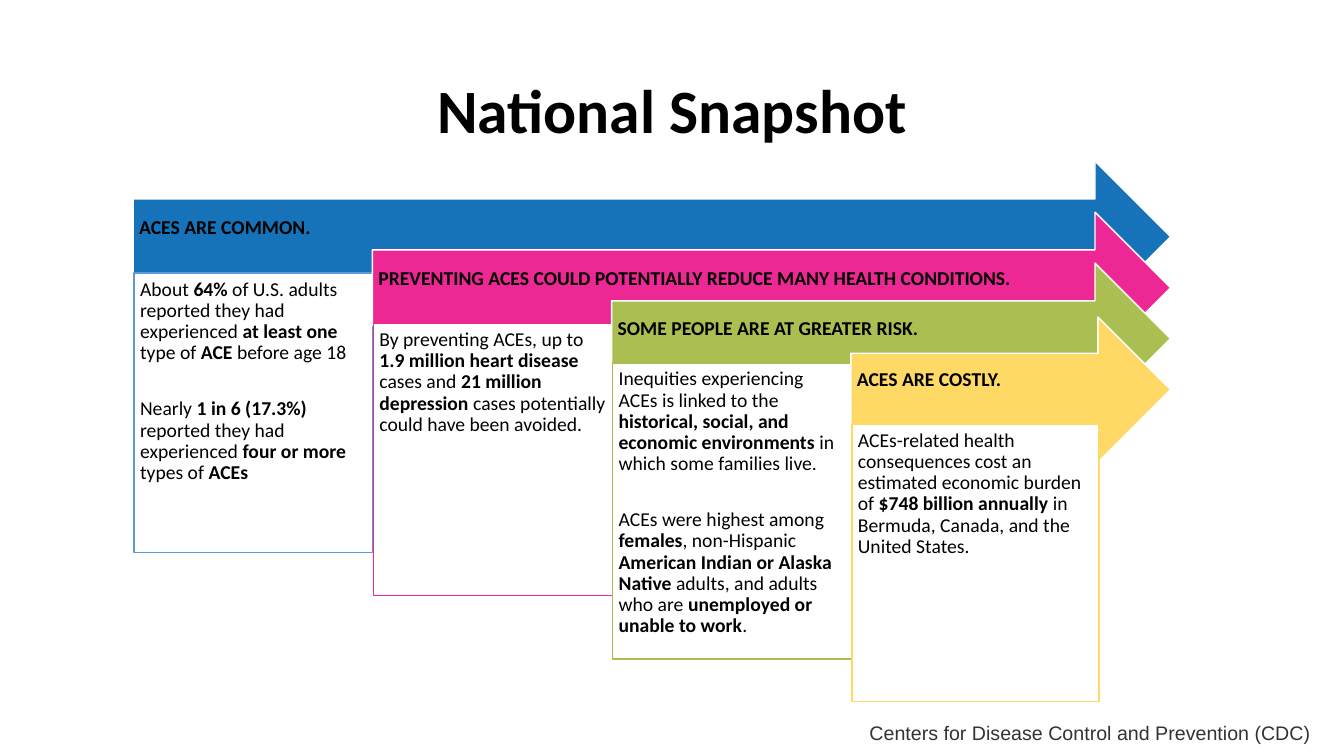
from dataclasses import dataclass

from pptx import Presentation
from pptx.dml.color import RGBColor
from pptx.enum.shapes import MSO_SHAPE
from pptx.enum.text import MSO_ANCHOR, MSO_AUTO_SIZE, PP_ALIGN
from pptx.util import Inches, Pt

ARROW, RECT = MSO_SHAPE.RIGHT_ARROW, MSO_SHAPE.RECTANGLE
TOP, MIDDLE = MSO_ANCHOR.TOP, MSO_ANCHOR.MIDDLE
LEFT, CENTER, RIGHT = PP_ALIGN.LEFT, PP_ALIGN.CENTER, PP_ALIGN.RIGHT
FIT_SHAPE, NO_FIT = MSO_AUTO_SIZE.SHAPE_TO_FIT_TEXT, MSO_AUTO_SIZE.NONE

COLORS = {
    "black": "000000", "white": "FFFFFF", "gray": "333333", "sky": "5B9BD5",
    "blue": "1673BA", "pink": "ED2793", "green": "AABE52", "yellow": "FFD966",
}

# Staircase of arrows: equal steps, shared right edge
FIRST_LEFT, STEP_X, RIGHT_EDGE = 1.32, 2.373, 11.61
FIRST_MIDDLE, STEP_Y = 2.35, 0.505
PARAGRAPH_GAP = 25


@dataclass
class Topic:
    heading: str
    paragraphs: list[str]  # asterisks enclose bold words
    fill: str
    border: str
    arrow_height: float
    card_top: float
    card_width: float
    card_height: float


TOPICS = [
    Topic("ACES ARE COMMON.",
          ["About *64% *of U.S. adults reported they had experienced "
           "*at least one *type of *ACE* before age 18",
           "Nearly *1 in 6 (17.3%) *reported they had experienced "
           "*four or more *types of *ACEs*"],
          "blue", "sky", 1.5, 2.71, 2.37, 2.77),
    Topic("PREVENTING ACES COULD POTENTIALLY REDUCE MANY HEALTH CONDITIONS.",
          ["By preventing ACEs, up to *1.9 million heart disease *cases and "
           "*21 million depression *cases potentially could have been avoided."],
          "pink", "pink", 1.5, 3.21, 2.37, 2.7),
    Topic("SOME PEOPLE ARE AT GREATER RISK.",
          ["Inequities experiencing ACEs is linked to the *historical, social, "
           "and economic environments *in which some families live.",
           "ACEs were highest among *females*, non-Hispanic *American Indian or "
           "Alaska Native *adults, and adults who are *unemployed or unable to "
           "work*."],
          "green", "green", 1.5, 3.6, 2.37, 2.94),
    Topic("ACES ARE COSTLY.",
          ["ACEs-related health consequences cost an estimated economic burden "
           "of *$748 billion annually *in Bermuda, Canada, and the United States."],
          "yellow", "yellow", 1.44, 4.21, 2.45, 2.75),
]


def rgb(name: str) -> RGBColor:
    return RGBColor.from_string(COLORS[name])


def write(tf, paragraphs: list[str], size: int = 14, font: str = "Calibri",
          color: str = "black", align=LEFT, spacing: float = 0.9) -> None:
    for i, text in enumerate(paragraphs):
        p = tf.paragraphs[0] if i == 0 else tf.add_paragraph()
        p.alignment = align
        p.line_spacing = spacing
        if i:
            p.space_before = Pt(PARAGRAPH_GAP)
        for j, part in enumerate(text.split("*")):
            if part:
                r = p.add_run()
                r.text = part
                r.font.name = font
                r.font.size = Pt(size)
                r.font.bold = j % 2 == 1
                r.font.color.rgb = rgb(color)


def add_box(s, kind, box: tuple, fill: str, border: str, paragraphs: list[str],
            anchor, right: float = 0.06, bottom: float = 0.06) -> None:
    sp = s.shapes.add_shape(kind, *map(Inches, box))
    sp.shadow.inherit = False
    sp.fill.solid()
    sp.fill.fore_color.rgb = rgb(fill)
    sp.line.color.rgb = rgb(border)
    sp.line.width = Pt(1)
    tf = sp.text_frame
    tf.word_wrap = True
    tf.vertical_anchor = anchor
    tf.margin_left = tf.margin_top = Inches(0.06)
    tf.margin_right, tf.margin_bottom = Inches(right), Inches(bottom)
    write(tf, paragraphs)


def add_topic(s, index: int, t: Topic) -> None:
    left = FIRST_LEFT + index * STEP_X
    top = FIRST_MIDDLE + index * STEP_Y - t.arrow_height / 2
    add_box(s, ARROW, (left, top, RIGHT_EDGE - left, t.arrow_height),
            t.fill, "white", [f"*{t.heading}*"], MIDDLE, right=0.28, bottom=0.24)
    add_box(s, RECT, (left + 0.01, t.card_top, t.card_width, t.card_height),
            "white", t.border, t.paragraphs, TOP)


def main() -> None:
    prs = Presentation()
    prs.slide_width, prs.slide_height = Inches(13.33), Inches(7.5)
    s = prs.slides.add_slide(prs.slide_layouts[5])

    # Title
    title = s.shapes.title
    title.left, title.top = Inches(0.92), Inches(0.4)
    title.width, title.height = Inches(11.5), Inches(1.45)
    tf = title.text_frame
    tf.auto_size = NO_FIT
    tf.vertical_anchor = MIDDLE
    write(tf, ["*National Snapshot*"], size=44, align=CENTER)

    # Arrows with their cards
    for index, topic in enumerate(TOPICS):
        add_topic(s, index, topic)

    # Source line
    source = s.shapes.add_textbox(Inches(8.16), Inches(7.1), Inches(4.94), Inches(0.34))
    tf = source.text_frame
    tf.word_wrap = True
    tf.auto_size = FIT_SHAPE
    write(tf, ["Centers for Disease Control and Prevention (CDC)"],
          font="Arial", color="gray", align=RIGHT, spacing=1.0)

    prs.save("out.pptx")


if __name__ == "__main__":
    main()
